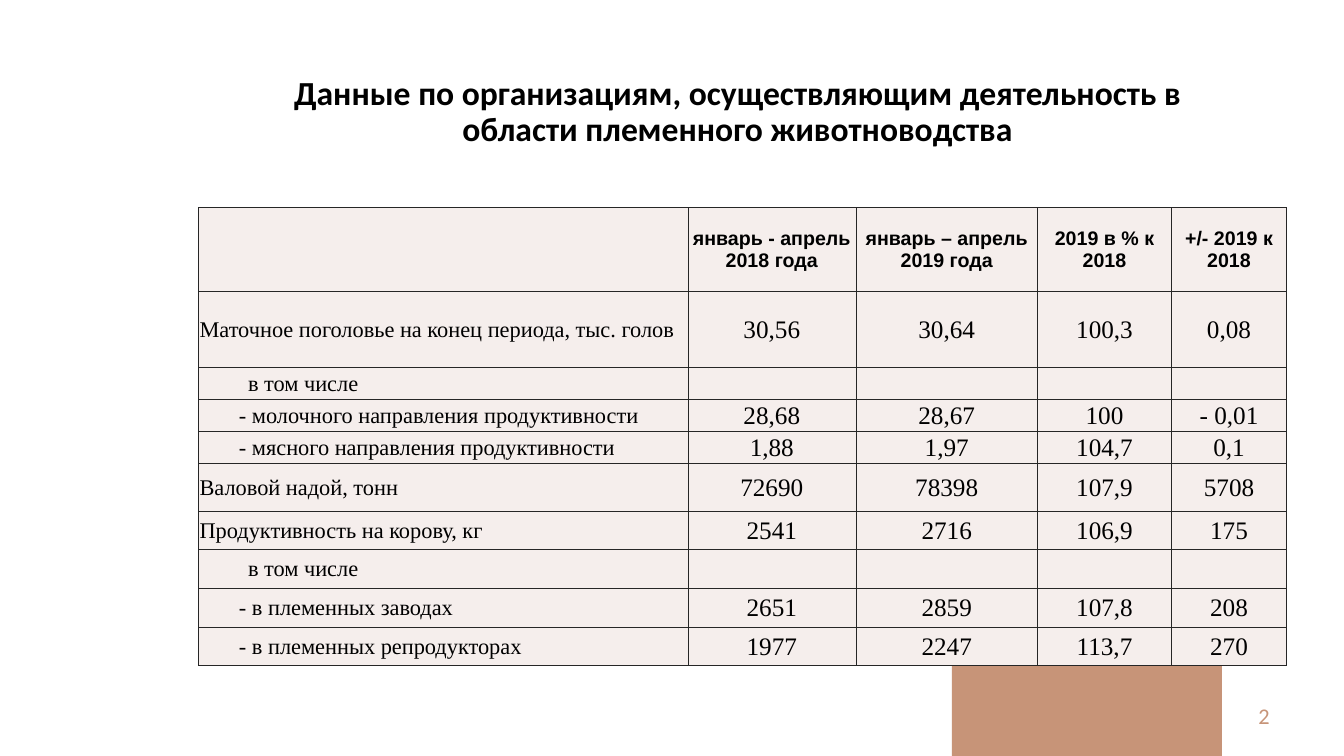
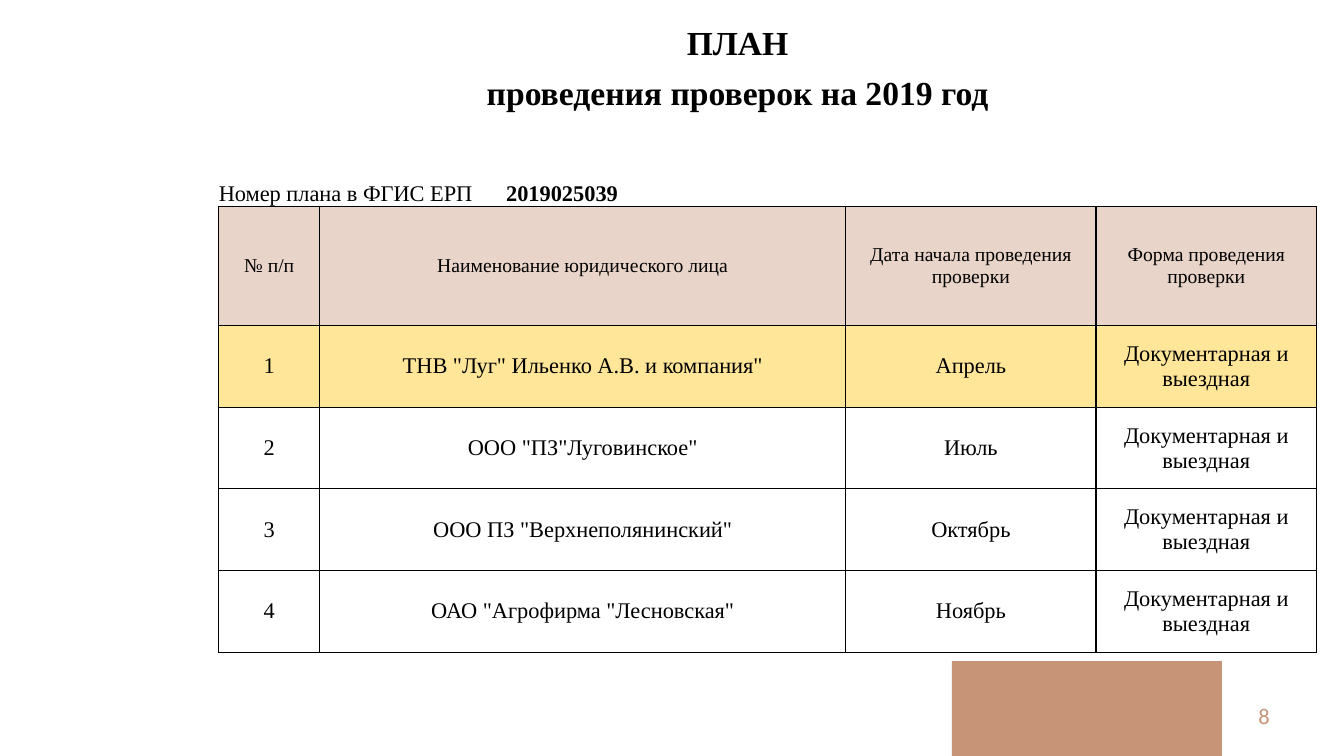
import dataclasses

import lxml.etree
import pptx
import pptx.dml.color
import pptx.enum.shapes
import pptx.enum.text
import pptx.oxml.ns
import pptx.util

Inches = pptx.util.Inches
Align = pptx.enum.text.PP_ALIGN
Anchor = pptx.enum.text.MSO_ANCHOR


@dataclasses.dataclass(frozen=True)
class Theme:
    accent: str = "C79478"
    text: str = "000000"
    light_fill: str = "F5EEEC"
    header_fill: str = "E9D4C9"
    highlight_fill: str = "FFE699"
    light_border: str = "262626"
    dark_border: str = "000000"
    sans: str = "Calibri"
    header_sans: str = "Arial"
    serif: str = "Times New Roman"
    title_size: int = 24
    value_size: int = 18
    body_size: int = 16
    header_size: int = 14


THEME = Theme()


def color(value):
    return pptx.dml.color.RGBColor.from_string(value)


def add_child(parent, tag, **attributes):
    child = lxml.etree.SubElement(parent, pptx.oxml.ns.qn(tag))
    for name, value in attributes.items():
        child.set(name, str(value))
    return child


def add_run(paragraph, text, font=THEME.serif, size=THEME.body_size,
            bold=False, fill=THEME.text):
    run = paragraph.add_run()
    run.text = text
    run.font.name = font
    run.font.size = pptx.util.Pt(size)
    run.font.bold = bold
    run.font.color.rgb = color(fill)


def write_text(frame, text, align=Align.LEFT, line_spacing=None,
               space_before=0, indent=0, **font_format):
    for index, line in enumerate(text.split("\n")):
        paragraph = frame.add_paragraph() if index else frame.paragraphs[0]
        paragraph.alignment = align
        if line_spacing:
            paragraph.line_spacing = line_spacing
        if index and space_before:
            paragraph.space_before = pptx.util.Pt(space_before)
        if indent:
            paragraph._p.get_or_add_pPr().set("marL", str(Inches(indent)))
        add_run(paragraph, line, **font_format)


def add_text_box(slide, box, text, anchor, **text_format):
    frame = slide.shapes.add_textbox(*map(Inches, box)).text_frame
    frame.word_wrap = True
    frame.vertical_anchor = anchor
    write_text(frame, text, **text_format)


def add_title(slide, box, text, font):
    add_text_box(slide, box, text, Anchor.BOTTOM, align=Align.CENTER,
                 line_spacing=0.9, space_before=10, font=font,
                 size=THEME.title_size, bold=True)


def add_footer(slide, box, number):
    left, top, width, height = box
    band = slide.shapes.add_shape(pptx.enum.shapes.MSO_SHAPE.RECTANGLE,
                                  *map(Inches, box))
    band.shadow.inherit = False
    band.fill.solid()
    band.fill.fore_color.rgb = color(THEME.accent)
    band.line.fill.background()
    add_text_box(slide, (left + 0.25, top + 0.34, 3, 0.4), number,
                 Anchor.MIDDLE, align=Align.RIGHT, font=THEME.sans,
                 size=THEME.body_size, fill=THEME.accent)


def add_slide(presentation, number):
    slide = presentation.slides.add_slide(presentation.slide_layouts[6])
    add_footer(slide, (9.44, 6.56, 2.68, 0.94), number)
    return slide


def set_borders(cell, line_color, width, sides="LRTB"):
    properties = cell._tc.get_or_add_tcPr()
    for index, side in enumerate("LRTB"):
        line = add_child(properties, f"a:ln{side}", w=pptx.util.Pt(width))
        if side in sides:
            fill = add_child(line, "a:solidFill")
            add_child(fill, "a:srgbClr", val=line_color)
        else:
            add_child(line, "a:noFill")
        properties.insert(index, line)


def style_cell(cell, fill=None, margin=0, anchor=Anchor.MIDDLE):
    cell.margin_left = cell.margin_right = cell.margin_top = Inches(margin)
    cell.margin_bottom = 0
    cell.vertical_anchor = anchor
    if fill:
        cell.fill.solid()
        cell.fill.fore_color.rgb = color(fill)
    else:
        cell.fill.background()


def add_plain_table(slide, left, top, column_widths, row_heights):
    table = slide.shapes.add_table(
        len(row_heights), len(column_widths), Inches(left), Inches(top),
        Inches(sum(column_widths)), Inches(sum(row_heights))).table
    table.first_row = table.horz_banding = False
    for column, width in zip(table.columns, column_widths):
        column.width = Inches(width)
    for row, height in zip(table.rows, row_heights):
        row.height = Inches(height)
    return table


def add_breeding_table(slide, left, top):
    headers = ["", "январь - апрель\n2018 года", "январь – апрель\n2019 года",
               "2019 в % к 2018", "+/- 2019 к 2018"]
    group, item = 0.48, 0.39
    rows = [
        (0.75, 0, "Маточное поголовье на конец периода, тыс. голов",
         "30,56", "30,64", "100,3", "0,08"),
        (0.32, group, "в том числе", "", "", "", ""),
        (0.32, item, "- молочного направления продуктивности",
         "28,68", "28,67", "100", "- 0,01"),
        (0.32, item, "- мясного направления продуктивности",
         "1,88", "1,97", "104,7", "0,1"),
        (0.47, 0, "Валовой надой, тонн", "72690", "78398", "107,9", "5708"),
        (0.38, 0, "Продуктивность на корову, кг",
         "2541", "2716", "106,9", "175"),
        (0.39, group, "в том числе", "", "", "", ""),
        (0.38, item, "- в племенных заводах", "2651", "2859", "107,8", "208"),
        (0.38, item, "- в племенных репродукторах",
         "1977", "2247", "113,7", "270"),
    ]
    table = add_plain_table(slide, left, top, [4.85, 1.67, 1.8, 1.33, 1.14],
                            [0.83] + [row[0] for row in rows])
    for cell in table.iter_cells():
        style_cell(cell, THEME.light_fill, margin=0.01)
        set_borders(cell, THEME.light_border, 0.25)
    for column, header in enumerate(headers):
        if header:
            write_text(table.cell(0, column).text_frame, header,
                       align=Align.CENTER, font=THEME.header_sans,
                       size=THEME.header_size, bold=True)
    for index, (_, indent, label, *values) in enumerate(rows, 1):
        write_text(table.cell(index, 0).text_frame, label, indent=indent)
        for column, value in enumerate(values, 1):
            if value:
                write_text(table.cell(index, column).text_frame, value,
                           align=Align.CENTER, size=THEME.value_size)


def add_plan_number(cell):
    paragraph = cell.text_frame.paragraphs[0]
    tabs = add_child(paragraph._p.get_or_add_pPr(), "a:tabLst")
    add_child(tabs, "a:tab", pos=Inches(2.85), algn="l")
    add_run(paragraph, "Номер плана в ФГИС ЕРП\t")
    add_run(paragraph, "2019025039", bold=True)


def add_inspection_table(slide, left, top):
    headers = ["№ п/п", "Наименование юридического лица",
               "Дата начала проведения проверки", "Форма проведения проверки"]
    inspections = [
        ('ТНВ "Луг" Ильенко А.В. и компания"', "Апрель"),
        ('ООО "ПЗ"Луговинское"', "Июль"),
        ('ООО ПЗ "Верхнеполянинский"', "Октябрь"),
        ('ОАО "Агрофирма "Лесновская"', "Ноябрь"),
    ]
    rows = [headers] + [
        [str(number), name, month, "Документарная и выездная"]
        for number, (name, month) in enumerate(inspections, 1)]
    fills = {1: THEME.header_fill, 2: THEME.highlight_fill}
    table = add_plain_table(slide, left, top, [1, 5.22, 2.48, 2.19],
                            [0.68, 1.18] + [0.81] * len(inspections))
    for cell in table.rows[0].cells:
        style_cell(cell, anchor=Anchor.BOTTOM)
        set_borders(cell, THEME.dark_border, 1, sides="B")
    table.cell(0, 0).merge(table.cell(0, 1))
    add_plan_number(table.cell(0, 0))
    for index, row in enumerate(rows, 1):
        size = THEME.header_size if index == 1 else THEME.body_size
        for column, text in enumerate(row):
            cell = table.cell(index, column)
            style_cell(cell, fills.get(index))
            set_borders(cell, THEME.dark_border, 1)
            write_text(cell.text_frame, text, align=Align.CENTER, size=size)


def build_breeding_slide(presentation):
    slide = add_slide(presentation, "2")
    add_title(slide, (2.42, 0.4, 9.79, 1.13),
              "Данные по организациям, осуществляющим деятельность в "
              "области племенного животноводства", THEME.sans)
    add_breeding_table(slide, 1.97, 2.06)


def build_inspection_slide(presentation):
    slide = add_slide(presentation, "8")
    add_title(slide, (2.42, 0.1, 9.79, 1.07),
              "ПЛАН\nпроведения проверок на 2019 год", THEME.serif)
    add_inspection_table(slide, 2.17, 1.37)


def main():
    presentation = pptx.Presentation()
    presentation.slide_width = Inches(13.33)
    presentation.slide_height = Inches(7.5)
    build_breeding_slide(presentation)
    build_inspection_slide(presentation)
    presentation.save("out.pptx")


if __name__ == "__main__":
    main()
